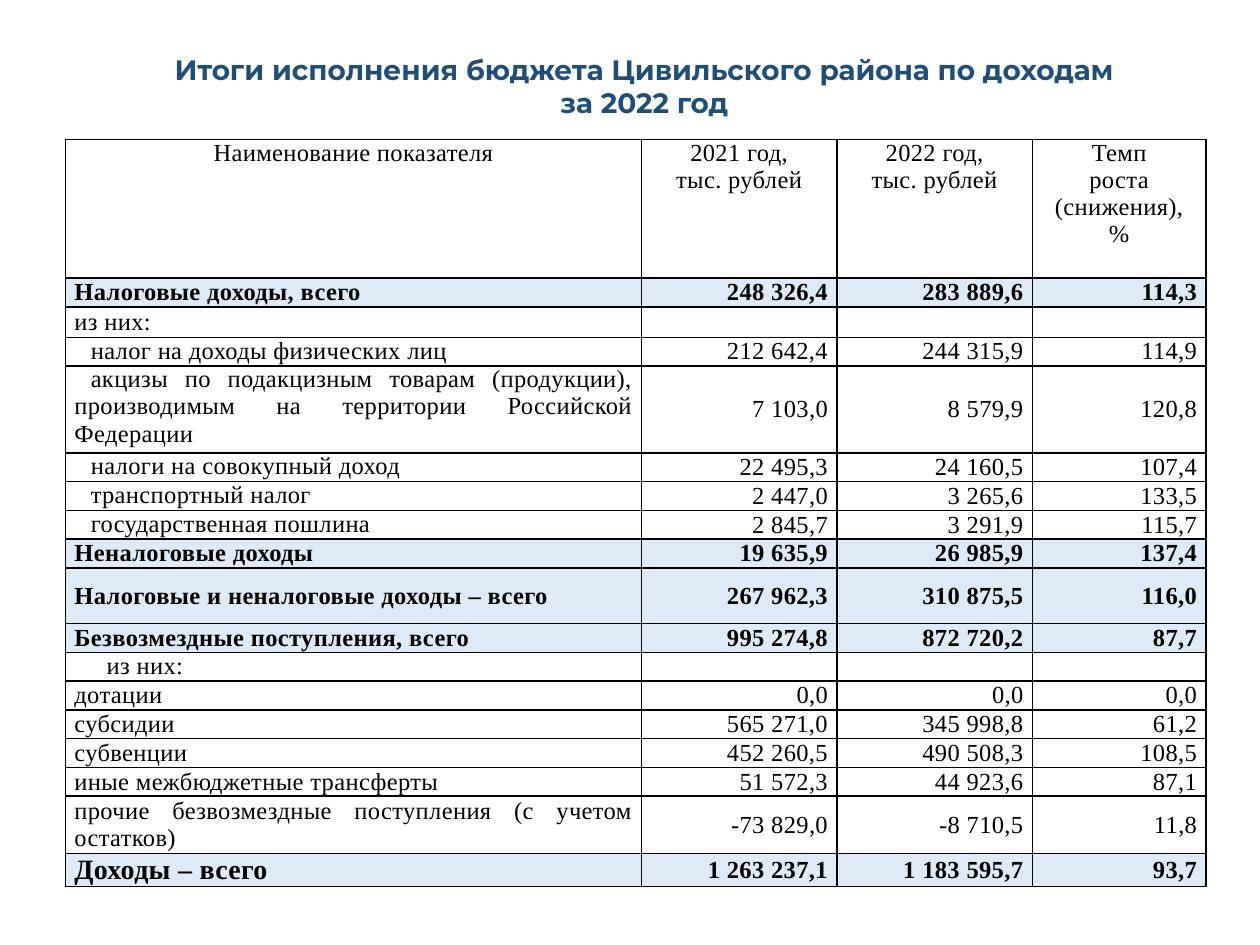
"""Builds the slide on district budget revenues for 2022."""
from lxml import etree
from pptx import Presentation
from pptx import util as u
from pptx.dml.color import RGBColor
from pptx.enum import text
from pptx.oxml import ns

COLORS = {"title": "1F4E79", "ink": "000000", "total": "DEEBF7"}
FONT = "Times New Roman"
COLUMNS = [11.61, 3.94, 3.94, 3.5]
ROW_HEIGHT = 0.58
TALL_ROWS = {0: 2.8, 2: 0.61, 4: 1.75, 9: 1.12, 16: 1.16, 17: 0.66}
TOTALS = {1, 8, 9, 10, 17}
INDENTS = {3: 0.33, 4: 0.33, 5: 0.33, 6: 0.33, 7: 0.33, 11: 0.65}
ROWS = [
    ["Наименование показателя", "2021 год,\nтыс. рублей",
     "2022 год,\nтыс. рублей", "Темп\nроста\n(снижения),\n%"],
    ["Налоговые доходы, всего", "248 326,4", "283 889,6", "114,3"],
    ["из них:", "", "", ""],
    ["налог на доходы физических лиц", "212 642,4", "244 315,9", "114,9"],
    ["акцизы по подакцизным товарам (продукции), производимым на территории "
     "Российской Федерации", "7 103,0", "8 579,9", "120,8"],
    ["налоги на совокупный доход", "22 495,3", "24 160,5", "107,4"],
    ["транспортный налог", "2 447,0", "3 265,6", "133,5"],
    ["государственная пошлина", "2 845,7", "3 291,9", "115,7"],
    ["Неналоговые доходы", "19 635,9", "26 985,9", "137,4"],
    ["Налоговые и неналоговые доходы – всего", "267 962,3", "310 875,5", "116,0"],
    ["Безвозмездные поступления, всего", "995 274,8", "872 720,2", "87,7"],
    ["из них:", "", "", ""],
    ["дотации", "0,0", "0,0", "0,0"],
    ["субсидии", "565 271,0", "345 998,8", "61,2"],
    ["субвенции", "452 260,5", "490 508,3", "108,5"],
    ["иные межбюджетные трансферты", "51 572,3", "44 923,6", "87,1"],
    ["прочие безвозмездные поступления (с учетом остатков)",
     "-73 829,0", "-8 710,5", "11,8"],
    ["Доходы – всего", "1 263 237,1", "1 183 595,7", "93,7"],
]


def set_font(p, name, size, color, bold):
    """Format the whole paragraph."""
    p.font.name, p.font.size, p.font.bold = name, u.Pt(size), bold
    p.font.color.rgb = RGBColor.from_string(COLORS[color])


def add_title(s, content):
    """Place and format the title placeholder."""
    sp = s.shapes.title
    sp.left, sp.top, sp.width, sp.height = u.Cm(2.39), u.Cm(0.56), u.Cm(21.2), u.Cm(1.85)
    tf = sp.text_frame
    tf.text = content
    tf.word_wrap = True
    tf.auto_size = text.MSO_AUTO_SIZE.NONE
    tf.vertical_anchor = text.MSO_ANCHOR.BOTTOM
    tf.margin_top = tf.margin_bottom = 0
    p = tf.paragraphs[0]
    p.alignment = text.PP_ALIGN.CENTER
    set_font(p, "Montserrat", 16, "title", True)


def add_borders(cell):
    """Draw a thin line on each side of the cell."""
    props = cell._tc.get_or_add_tcPr()
    for side in ("lnL", "lnR", "lnT", "lnB"):
        line = etree.SubElement(props, ns.qn(f"a:{side}"), w=str(u.Pt(1)))
        fill = etree.SubElement(line, ns.qn("a:solidFill"))
        etree.SubElement(fill, ns.qn("a:srgbClr"), val=COLORS["ink"])


def format_cell(cell, row, col):
    """Style a cell by its place in the table."""
    add_borders(cell)
    if row in TOTALS:
        cell.fill.solid()
        cell.fill.fore_color.rgb = RGBColor.from_string(COLORS["total"])
    else:
        cell.fill.background()
    cell.margin_left = cell.margin_right = u.Cm(0.18)
    cell.margin_top = cell.margin_bottom = 0
    top = row == 0 or (col == 0 and 3 <= row <= 7)
    cell.vertical_anchor = text.MSO_ANCHOR.TOP if top else text.MSO_ANCHOR.MIDDLE
    size = 16 if row == len(ROWS) - 1 and col == 0 else 14
    for p in cell.text_frame.paragraphs:
        if row == 0:
            p.alignment = text.PP_ALIGN.CENTER
        else:
            p.alignment = text.PP_ALIGN.RIGHT if col else text.PP_ALIGN.JUSTIFY
        set_font(p, FONT, size, "ink", row in TOTALS)
        props = p._p.get_or_add_pPr()
        props.find(ns.qn("a:defRPr")).set("spc", "20")
        if col == 0 and row in INDENTS:
            props.set("indent", str(u.Cm(INDENTS[row])))
        if not p.runs:
            p._p.get_or_add_endParaRPr().set("sz", str(size * 100))


def add_budget_table(s):
    """Add the table of revenues."""
    heights = [TALL_ROWS.get(i, ROW_HEIGHT) for i in range(len(ROWS))]
    table = s.shapes.add_table(len(ROWS), len(COLUMNS), u.Cm(1.32), u.Cm(2.81),
                               u.Cm(sum(COLUMNS)), u.Cm(sum(heights))).table
    table.first_row = table.horz_banding = False
    for column, width in zip(table.columns, COLUMNS):
        column.width = u.Cm(width)
    for i, (height, values) in enumerate(zip(heights, ROWS)):
        table.rows[i].height = u.Cm(height)
        for j, value in enumerate(values):
            cell = table.cell(i, j)
            cell.text = value
            format_cell(cell, i, j)


def main():
    """Build and save the presentation."""
    prs = Presentation()
    prs.slide_width, prs.slide_height = u.Cm(25.4), u.Cm(19.05)
    s = prs.slides.add_slide(prs.slide_layouts[5])
    add_title(s, "Итоги исполнения бюджета Цивильского района по доходам\vза 2022 год")
    add_budget_table(s)
    prs.save("out.pptx")


if __name__ == "__main__":
    main()
